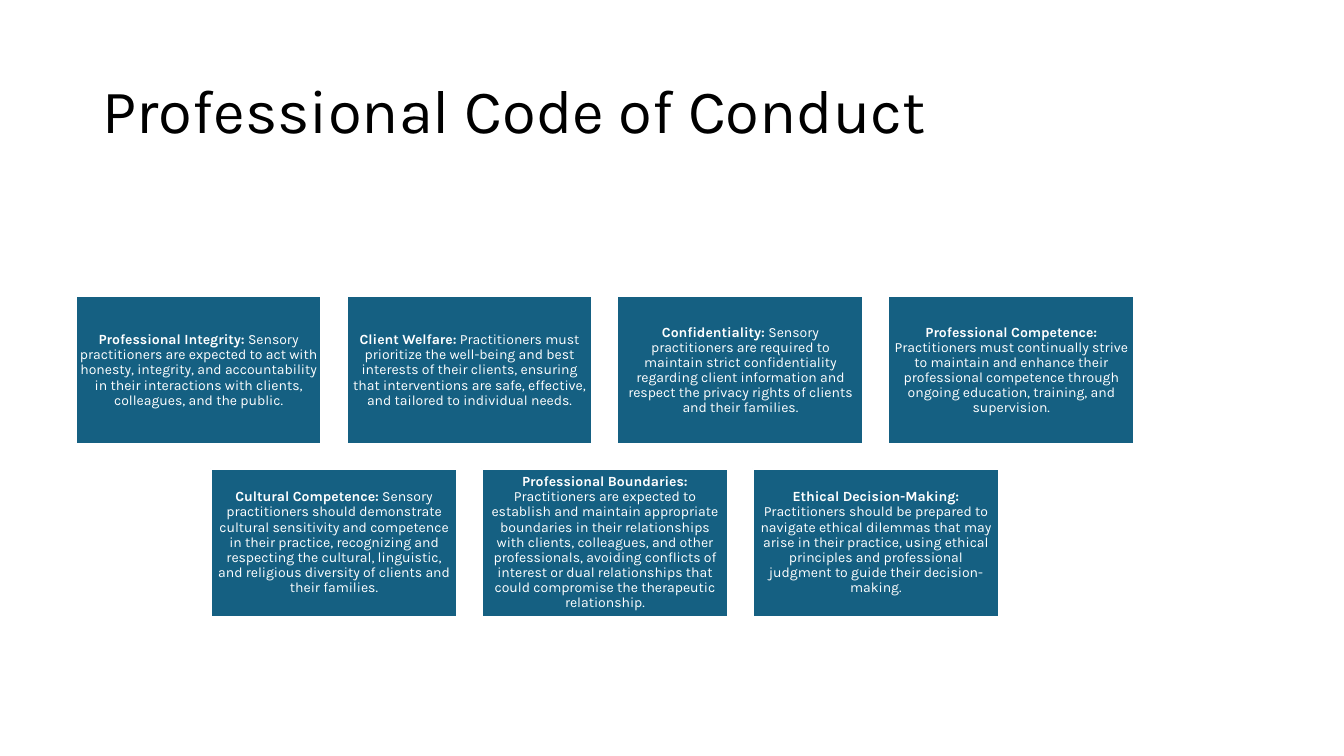
import pptx
import pptx.dml.color
import pptx.enum.shapes
import pptx.enum.text
import pptx.util

Inches, Pt = pptx.util.Inches, pptx.util.Pt
Align, Anchor = pptx.enum.text.PP_ALIGN, pptx.enum.text.MSO_ANCHOR

# Content: rows of (principle, explanation)
TITLE = "Professional Code of Conduct"
ROWS = [
    [
        ("Professional Integrity:", "Sensory practitioners are expected to act with honesty, "
         "integrity, and accountability in their interactions with clients, colleagues, "
         "and the public."),
        ("Client Welfare:", "Practitioners must prioritize the well-being and best interests "
         "of their clients, ensuring that interventions are safe, effective, and tailored "
         "to individual needs."),
        ("Confidentiality:", "Sensory practitioners are required to maintain strict "
         "confidentiality regarding client information and respect the privacy rights of "
         "clients and their families."),
        ("Professional Competence:", "Practitioners must continually strive to maintain and "
         "enhance their professional competence through ongoing education, training, "
         "and supervision."),
    ],
    [
        ("Cultural Competence:", "Sensory practitioners should demonstrate cultural "
         "sensitivity and competence in their practice, recognizing and respecting the "
         "cultural, linguistic, and religious diversity of clients and their families."),
        ("Professional Boundaries:", "Practitioners are expected to establish and maintain "
         "appropriate boundaries in their relationships with clients, colleagues, and other "
         "professionals, avoiding conflicts of interest or dual relationships that could "
         "compromise the therapeutic relationship."),
        ("Ethical Decision-Making:", "Practitioners should be prepared to navigate ethical "
         "dilemmas that may arise in their practice, using ethical principles and "
         "professional judgment to guide their decision-making."),
    ],
]

THEME = {
    "font": "Karla",
    "title_size": 44, "card_size": 10,
    "ink": "000000", "paper": "FFFFFF", "card": "156082",
    "outline": 1.5, "line_spacing": 0.9, "space_after": 3.5,
}

# Card grid, in inches
CARD_W, CARD_H = 2.44, 1.47
GAP_X, GAP_Y = 0.247, 0.24
GRID_CENTER, GRID_TOP = 6.0, 2.94


def color(name):
    return pptx.dml.color.RGBColor.from_string(THEME[name])


def add_span(para, text, size, ink, bold=False):
    span = para.add_run()
    span.text = text
    span.font.name = THEME["font"]
    span.font.size = Pt(THEME[size])
    span.font.bold = bold
    span.font.color.rgb = color(ink)


def add_title(page):
    box = page.shapes.add_textbox(Inches(0.92), Inches(0.4), Inches(11.5), Inches(1.45))
    frame = box.text_frame
    frame.word_wrap = True
    frame.vertical_anchor = Anchor.MIDDLE
    para = frame.paragraphs[0]
    para.line_spacing = THEME["line_spacing"]
    add_span(para, TITLE, "title_size", "ink")


def add_card(page, left, top, principle, explanation):
    card = page.shapes.add_shape(
        pptx.enum.shapes.MSO_SHAPE.RECTANGLE,
        Inches(left), Inches(top), Inches(CARD_W), Inches(CARD_H))
    card.shadow.inherit = False
    card.fill.solid()
    card.fill.fore_color.rgb = color("card")
    card.line.color.rgb = color("paper")
    card.line.width = Pt(THEME["outline"])

    frame = card.text_frame
    frame.word_wrap = True
    frame.vertical_anchor = Anchor.MIDDLE
    frame.margin_left = frame.margin_right = Inches(0.04)
    frame.margin_top = frame.margin_bottom = Inches(0.04)
    para = frame.paragraphs[0]
    para.alignment = Align.CENTER
    para.line_spacing = THEME["line_spacing"]
    para.space_after = Pt(THEME["space_after"])
    add_span(para, principle, "card_size", "paper", bold=True)
    add_span(para, " " + explanation, "card_size", "paper")


def main():
    deck = pptx.Presentation()
    deck.slide_width, deck.slide_height = Inches(13.33), Inches(7.5)
    page = deck.slides.add_slide(deck.slide_layouts[6])
    add_title(page)

    # Each row is centred on the same axis
    for row, cards in enumerate(ROWS):
        row_width = len(cards) * CARD_W + (len(cards) - 1) * GAP_X
        top = GRID_TOP + row * (CARD_H + GAP_Y)
        for column, (principle, explanation) in enumerate(cards):
            left = GRID_CENTER - row_width / 2 + column * (CARD_W + GAP_X)
            add_card(page, left, top, principle, explanation)

    deck.save("out.pptx")


if __name__ == "__main__":
    main()
